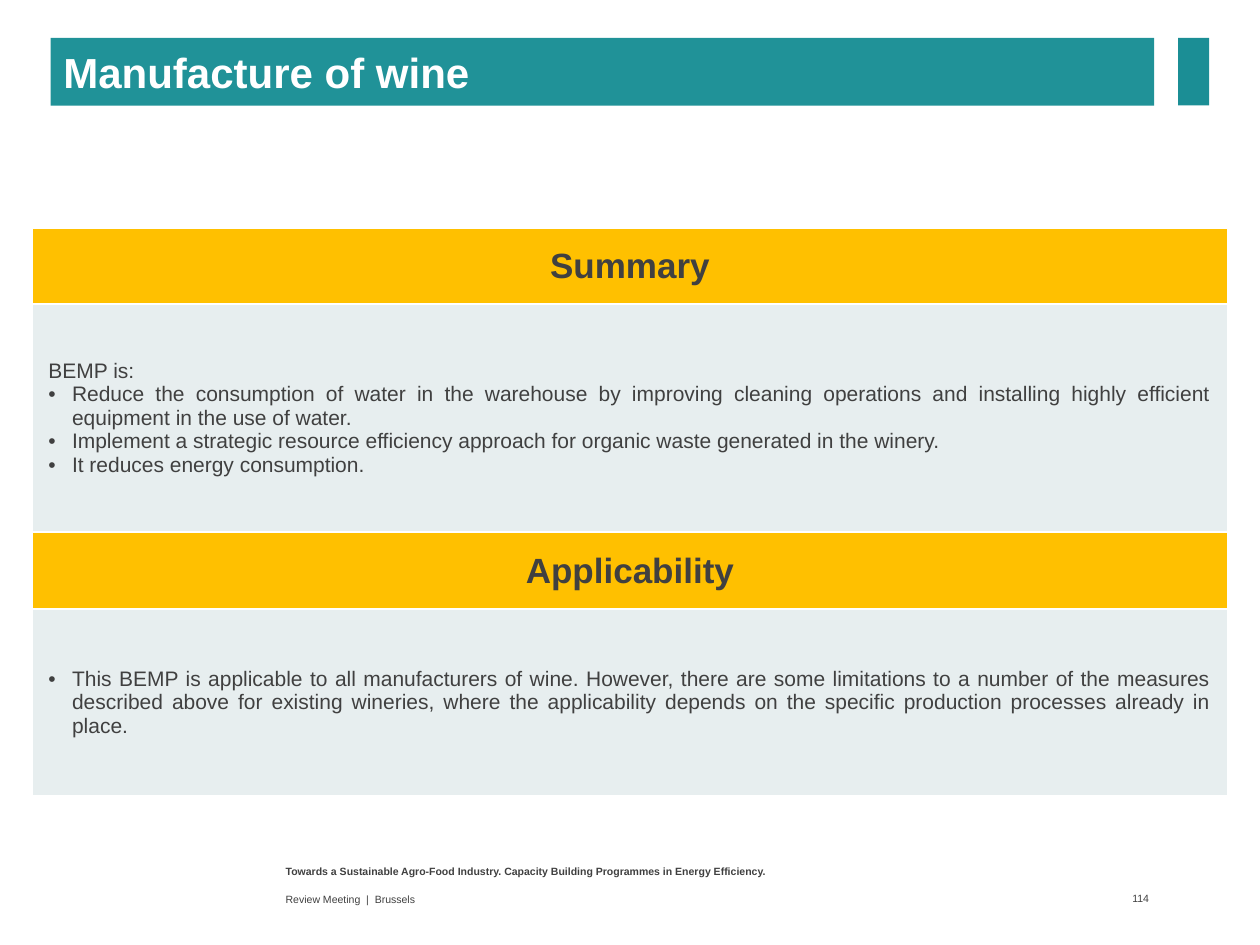
from lxml import etree
from pptx import Presentation
from pptx.dml.color import RGBColor
from pptx.enum.shapes import MSO_SHAPE
from pptx.enum.text import MSO_ANCHOR, MSO_AUTO_SIZE, PP_ALIGN
from pptx.oxml.ns import qn
from pptx.util import Pt

TOP, MIDDLE = MSO_ANCHOR.TOP, MSO_ANCHOR.MIDDLE
LEFT, CENTER, RIGHT, JUSTIFY = PP_ALIGN.LEFT, PP_ALIGN.CENTER, PP_ALIGN.RIGHT, PP_ALIGN.JUSTIFY
RECT, NO_FIT = MSO_SHAPE.RECTANGLE, MSO_AUTO_SIZE.NONE

THEME = {
    "font": "Arial", "text": "404040", "white": "FFFFFF", "title_bar": "209298",
    "accent": "1B8E95", "heading": "FFC000", "body": "E7EEEF",
    "title_size": 24, "heading_size": 20, "body_size": 12, "footer_size": 6,
}

TITLE = "Manufacture of wine"
PANELS = [
    {"heading": "Summary", "top": 130.3, "rows": (43.4, 130.1), "after": 0,
     "lead": ["BEMP is:"],
     "bullets": [
         "Reduce the consumption of water in the warehouse by improving cleaning operations "
         "and installing highly efficient equipment in the use of water.",
         "Implement a strategic resource efficiency approach for organic waste generated in the winery.",
         "It reduces energy consumption."]},
    {"heading": "Applicability", "top": 304.4, "rows": (43.6, 106.7), "after": 6,
     "lead": [],
     "bullets": [
         "This BEMP is applicable to all manufacturers of wine. However, there are some limitations "
         "to a number of the measures described above for existing wineries, where the applicability "
         "depends on the specific production processes already in place."]},
]
FOOTERS = [
    ("Towards a Sustainable Agro-Food Industry. Capacity Building Programmes in Energy Efficiency.",
     (156.2, 491, 396, 15.1), {"bold": True, "anchor": TOP}),
    ("Review Meeting  |  Brussels", (156.2, 506.9, 396, 13.7), {}),
    ("114", (619.2, 506.2, 40.3, 14.4), {"align": RIGHT, "right": 2.9}),
]
PANEL_LEFT, PANEL_WIDTH = 18.7, 682.6
BAR_TOP, BAR_HEIGHT = 21.7, 38.6
BULLET_INDENT = 13.5


def color(name):
    return RGBColor.from_string(THEME[name])


def fill(target, name):
    target.fill.solid()
    target.fill.fore_color.rgb = color(name)


def place(s, left, top, width, height):
    s.left, s.top, s.width, s.height = Pt(left), Pt(top), Pt(width), Pt(height)


def write(tf, text, size="body_size", ink="text", bold=False, align=LEFT,
          bullet=False, after=0, append=False):
    p = tf.add_paragraph() if append else tf.paragraphs[0]
    p.alignment, p.space_after = align, Pt(after)
    if bullet:
        pPr = p._p.get_or_add_pPr()
        pPr.set("marL", str(Pt(BULLET_INDENT)))
        pPr.set("indent", str(-Pt(BULLET_INDENT)))
        etree.SubElement(pPr, qn("a:buFont"), typeface=THEME["font"])
        etree.SubElement(pPr, qn("a:buChar"), char="•")
    r = p.add_run()
    r.text = text
    r.font.name, r.font.size, r.font.bold = THEME["font"], Pt(THEME[size]), bold
    r.font.color.rgb = color(ink)


def frame(tf, anchor=MIDDLE, right=7.2):
    tf.word_wrap, tf.auto_size, tf.vertical_anchor = True, NO_FIT, anchor
    tf.margin_left, tf.margin_right = Pt(7.2), Pt(right)
    tf.margin_top = tf.margin_bottom = Pt(3.6)


def style_cell(cell, fill_name, side, edge):
    tcPr = cell._tc.get_or_add_tcPr()
    for tag in ("a:lnL", "a:lnR", "a:lnT", "a:lnB"):
        ln = etree.SubElement(tcPr, qn(tag), w=str(Pt(1)))
        solid = etree.SubElement(ln, qn("a:solidFill"))
        etree.SubElement(solid, qn("a:srgbClr"), val=THEME["white"])
    fill(cell, fill_name)
    cell.vertical_anchor = MIDDLE
    cell.margin_left = cell.margin_right = Pt(side)
    cell.margin_top = cell.margin_bottom = Pt(edge)


def add_panel(slide, panel):
    rows = panel["rows"]
    table = slide.shapes.add_table(2, 1, Pt(PANEL_LEFT), Pt(panel["top"]),
                                   Pt(PANEL_WIDTH), Pt(sum(rows))).table
    for row, height in zip(table.rows, rows):
        row.height = Pt(height)
    heading, body = table.cell(0, 0), table.cell(1, 0)
    style_cell(heading, "heading", 7.2, 3.6)
    style_cell(body, "body", 9, 4.5)
    write(heading.text_frame, panel["heading"], size="heading_size", bold=True, align=CENTER)
    lines = [(t, False) for t in panel["lead"]] + [(t, True) for t in panel["bullets"]]
    for i, (text, bullet) in enumerate(lines):
        write(body.text_frame, text, align=JUSTIFY, bullet=bullet,
              after=panel["after"], append=i > 0)


def main():
    prs = Presentation()
    prs.slide_width, prs.slide_height = Pt(720), Pt(540)
    slide = prs.slides.add_slide(prs.slide_layouts[5])

    title = slide.shapes.title
    place(title, 29, BAR_TOP, 630.5, BAR_HEIGHT)
    fill(title, "title_bar")
    frame(title.text_frame)
    write(title.text_frame, TITLE, size="title_size", ink="white", bold=True)

    accent = slide.shapes.add_shape(RECT, Pt(673.2), Pt(BAR_TOP), Pt(17.8), Pt(BAR_HEIGHT))
    accent.shadow.inherit = False
    fill(accent, "accent")
    accent.line.fill.background()

    for panel in PANELS:
        add_panel(slide, panel)

    for text, box, fmt in FOOTERS:
        tf = slide.shapes.add_textbox(*map(Pt, box)).text_frame
        frame(tf, anchor=fmt.get("anchor", MIDDLE), right=fmt.get("right", 7.2))
        write(tf, text, size="footer_size", bold=fmt.get("bold", False),
              align=fmt.get("align", LEFT))

    prs.save("out.pptx")


if __name__ == "__main__":
    main()
